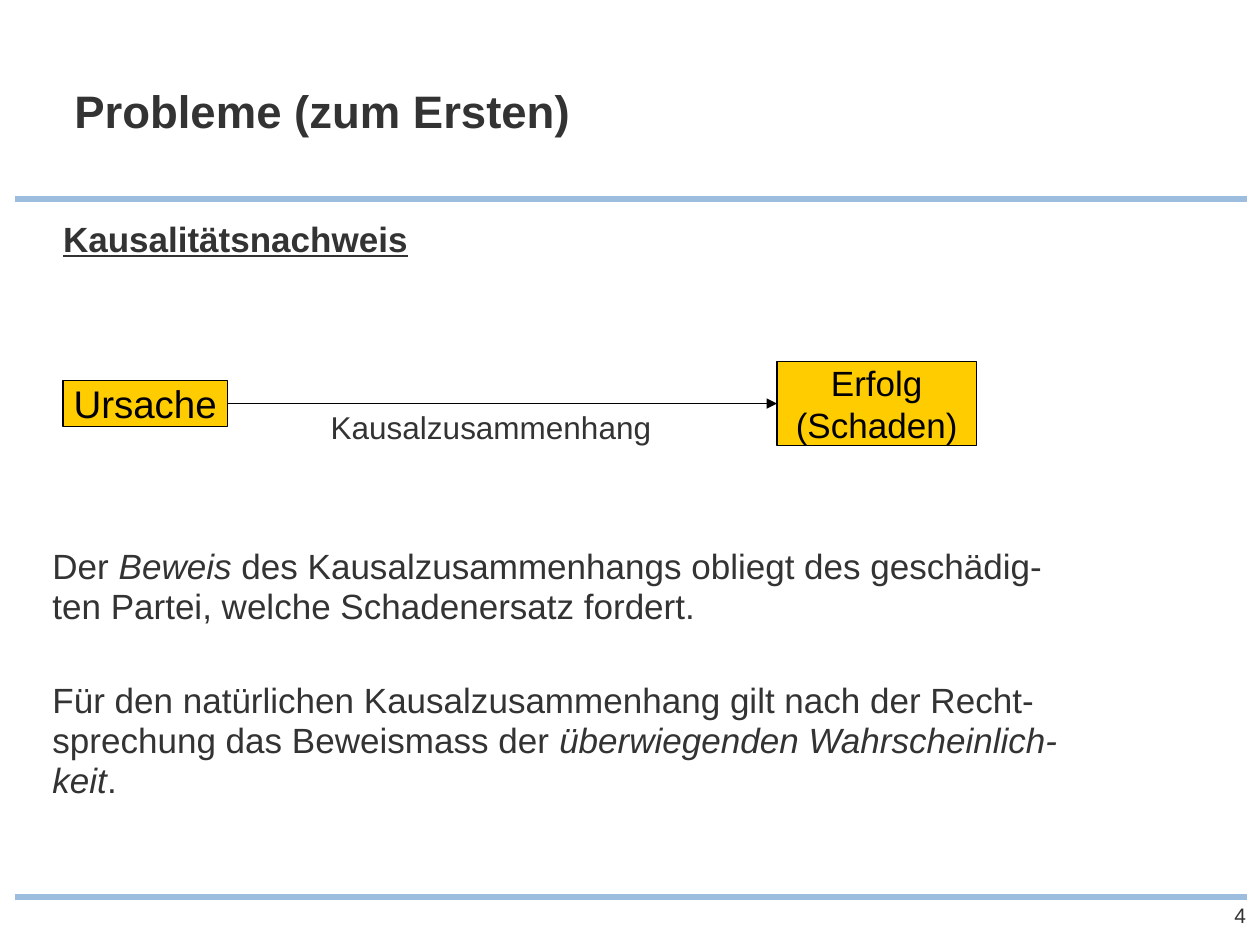
from lxml import etree
from pptx import Presentation
from pptx.dml.color import RGBColor
from pptx.enum.shapes import MSO_CONNECTOR, MSO_SHAPE
from pptx.enum.text import MSO_ANCHOR, PP_ALIGN
from pptx.oxml.ns import qn
from pptx.util import Pt

STRAIGHT = MSO_CONNECTOR.STRAIGHT
RECTANGLE = MSO_SHAPE.RECTANGLE
TOP, MIDDLE = MSO_ANCHOR.TOP, MSO_ANCHOR.MIDDLE
LEFT, CENTER, RIGHT = PP_ALIGN.LEFT, PP_ALIGN.CENTER, PP_ALIGN.RIGHT

BLUE = RGBColor(0x9C, 0xBD, 0xDE)
GRAY = RGBColor(0x33, 0x33, 0x33)
YELLOW = RGBColor(0xFF, 0xCC, 0x00)
BLACK = RGBColor(0, 0, 0)

TITLE = "Probleme (zum Ersten)"
HEADING = "Kausalitätsnachweis"
RELATION = "Kausalzusammenhang"
PAGE_NUMBER = "4"
EXPLANATION = [
    [("Der ", False), ("Beweis", True),
     (" des Kausalzusammenhangs obliegt des geschädig-ten Partei, "
      "welche Schadenersatz fordert.", False)],
    [("Für den natürlichen Kausalzusammenhang gilt nach der "
      "Recht-sprechung das Beweismass der ", False),
     ("überwiegenden Wahrscheinlich-keit", True), (".", False)],
]
CAUSE = ("Ursache", 36, 94, 26.6, 22)
EFFECT = ("Erfolg (Schaden)", 444, 114, 48.2, 20)
FLOW_Y = 230.6
RULES_Y = (113.8, 512.6)


def fill_text(shape, paragraphs, size, color, align=LEFT, anchor=TOP,
              spacing=None, gap=0, bold=None, underline=None):
    frame = shape.text_frame
    frame.word_wrap = True
    frame.vertical_anchor = anchor
    frame.margin_left = frame.margin_right = Pt(0)
    frame.margin_top = frame.margin_bottom = Pt(0)
    for index, runs in enumerate(paragraphs):
        paragraph = frame.add_paragraph() if index else frame.paragraphs[0]
        paragraph.alignment = align
        if spacing:
            paragraph.line_spacing = spacing
        if index:
            paragraph.space_before = Pt(gap)
        font = paragraph.font
        font.name, font.size, font.color.rgb = "Arial", Pt(size), color
        font.bold, font.underline = bold, underline
        for text, italic in runs:
            run = paragraph.add_run()
            run.text = text
            if italic:
                run.font.italic = True


def add_text(slide, box, paragraphs, size, **style):
    shape = slide.shapes.add_textbox(*map(Pt, box))
    fill_text(shape, paragraphs, size, GRAY, **style)


def add_line(slide, start, end, color, width, arrow=False):
    line = slide.shapes.add_connector(STRAIGHT, *map(Pt, start + end))
    line.line.color.rgb = color
    line.line.width = Pt(width)
    if arrow:
        etree.SubElement(line.line._get_or_add_ln(), qn("a:tailEnd"), type="triangle")
    etree.SubElement(line._element.spPr, qn("a:effectLst"))


def add_node(slide, text, left, width, height, size):
    shape = slide.shapes.add_shape(
        RECTANGLE, Pt(left), Pt(FLOW_Y - height / 2), Pt(width), Pt(height))
    shape.shadow.inherit = False
    shape.fill.solid()
    shape.fill.fore_color.rgb = YELLOW
    shape.line.color.rgb = BLACK
    shape.line.width = Pt(0.75)
    fill_text(shape, [[(text, False)]], size, BLACK, align=CENTER, anchor=MIDDLE)


def main():
    presentation = Presentation()
    presentation.slide_width, presentation.slide_height = Pt(720), Pt(540)
    slide = presentation.slides.add_slide(presentation.slide_layouts[6])

    for y in RULES_Y:
        add_line(slide, (8.6, y), (712.8, y), BLUE, 3)
    add_text(slide, (684, 515.5, 28, 14.4), [[(PAGE_NUMBER, False)]], 12, align=RIGHT)
    add_text(slide, (42.5, 51, 521, 40), [[(TITLE, False)]], 26, spacing=0.9, bold=True)
    add_text(slide, (36, 126, 635, 28), [[(HEADING, False)]], 20,
             spacing=0.95, bold=True, underline=True)

    for node in (CAUSE, EFFECT):
        add_node(slide, *node)
    cause_right = CAUSE[1] + CAUSE[2]
    add_line(slide, (cause_right, FLOW_Y), (EFFECT[1], FLOW_Y), BLACK, 0.75, arrow=True)
    add_text(slide, (189, 234.7, 200, 22), [[(RELATION, False)]], 18, spacing=0.95)
    add_text(slide, (30, 313, 576, 150), EXPLANATION, 20, spacing=0.95, gap=31)

    presentation.save("out.pptx")


if __name__ == "__main__":
    main()
